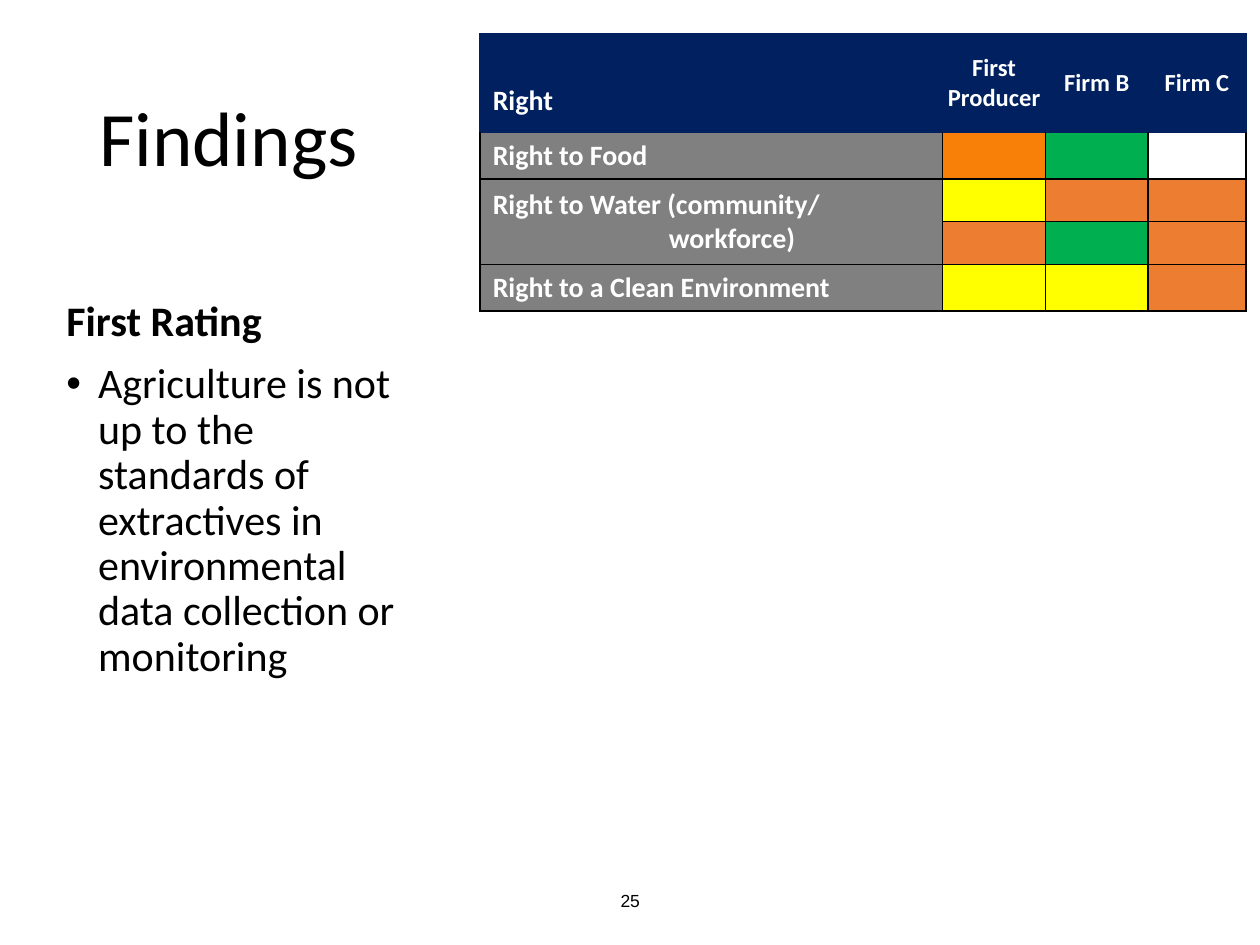
"""Build the findings slide with its table of ratings by right and company."""
from lxml.etree import SubElement
from pptx import Presentation
from pptx.dml.color import RGBColor
from pptx.enum.text import MSO_ANCHOR, PP_ALIGN
from pptx.oxml.ns import qn
from pptx.util import Cm, Pt


class Theme:
    font, foot = "Calibri", "Arial"
    black, white = "000000", "FFFFFF"
    navy, gray = "002060", "808080"
    amber, orange = "F88008", "ED7D31"
    green, yellow = "00B050", "FFFF00"
    title, body, label, head, num = 44, 24, 16, 14, 10


def style(par, size, color, bold=False, font=Theme.font):
    for run in par.runs:
        run.font.name = font
        run.font.size = Pt(size)
        run.font.bold = bold
        run.font.color.rgb = RGBColor.from_string(color)


def add_box(left, top, width, height, text, anchor):
    frame = slide.shapes.add_textbox(Cm(left), Cm(top), Cm(width), Cm(height)).text_frame
    frame.word_wrap = True
    frame.vertical_anchor = anchor
    frame.text = text
    return frame.paragraphs


deck = Presentation()
deck.slide_width, deck.slide_height = Cm(25.4), Cm(19.05)
slide = deck.slides.add_slide(deck.slide_layouts[6])

page, = add_box(8.41, 17.65, 8.59, 1.02, "25", MSO_ANCHOR.MIDDLE)
page.alignment = PP_ALIGN.CENTER
style(page, Theme.num, Theme.black, font=Theme.foot)

title, = add_box(1.75, 1.02, 21.9, 3.68, "Findings", MSO_ANCHOR.MIDDLE)
title.line_spacing = 0.9
style(title, Theme.title, Theme.black)

widths = [9.32, 2.08, 2.06, 1.98]
heights = [1.98, 0.94, 0.86, 0.86, 0.94]
names = ["Right", "Agriculture Firm A".replace("Agriculture", "Producer"), "Firm B", "Firm C"]
names[1] = "First Producer"
rights = ["Right to Food", "Right to Water (community/\nworkforce)", "",
          "Right to a Clean Environment"]
marks = [
    [Theme.amber, Theme.green, None],
    [Theme.yellow, Theme.orange, Theme.orange],
    [Theme.orange, Theme.green, Theme.orange],
    [Theme.yellow, Theme.yellow, Theme.orange],
]

table = slide.shapes.add_table(
    len(heights), len(widths), Cm(9.68), Cm(0.69),
    Cm(sum(widths)), Cm(sum(heights))).table
table.first_row = table.horz_banding = False
for col, width in zip(table.columns, widths):
    col.width = Cm(width)
for row, height in zip(table.rows, heights):
    row.height = Cm(height)

texts = [names] + [[right, "", "", ""] for right in rights]
fills = [[Theme.navy] * 4] + [[Theme.gray] + line for line in marks]
for r, line in enumerate(texts):
    for c, text in enumerate(line):
        cell = table.cell(r, c)
        cell.vertical_anchor = MSO_ANCHOR.MIDDLE
        if c:
            cell.margin_left = cell.margin_right = 0
            cell.margin_top = cell.margin_bottom = 0
        for side in ("L", "R", "T", "B"):
            edge = SubElement(cell._tc.get_or_add_tcPr(), qn(f"a:ln{side}"), w=str(Pt(1)))
            ink = SubElement(edge, qn("a:solidFill"))
            navy = r == 0 or (r == 1 and side == "T")
            SubElement(ink, qn("a:srgbClr"), val=Theme.navy if navy else Theme.black)
        if fills[r][c]:
            cell.fill.solid()
            cell.fill.fore_color.rgb = RGBColor.from_string(fills[r][c])
        else:
            cell.fill.background()
        if text:
            cell.text_frame.text = text
            for par in cell.text_frame.paragraphs:
                par.alignment = PP_ALIGN.CENTER if c else PP_ALIGN.LEFT
                style(par, Theme.head if c else Theme.label, Theme.white, bold=True)

table.cell(0, 0).vertical_anchor = MSO_ANCHOR.BOTTOM
table.cell(0, 0).margin_bottom = Cm(0.3)
water = table.cell(2, 0)
water.merge(table.cell(3, 0))
water.text_frame.paragraphs[1]._p.get_or_add_pPr().set("marL", str(Cm(3.55)))

lead, point = add_box(
    1.09, 5.92, 7.47, 11.4,
    "First Rating\nAgriculture is not up to the standards of extractives "
    "in environmental data collection or monitoring", MSO_ANCHOR.TOP)
props = point._p.get_or_add_pPr()
props.set("marL", str(Cm(0.64)))
props.set("indent", str(Cm(-0.64)))
SubElement(props, qn("a:buFont"), typeface=Theme.foot)
SubElement(props, qn("a:buChar"), char="•")
lead.line_spacing = point.line_spacing = 0.9
point.space_before = Pt(10)
style(lead, Theme.body, Theme.black, bold=True)
style(point, Theme.body, Theme.black)

deck.save("out.pptx")
